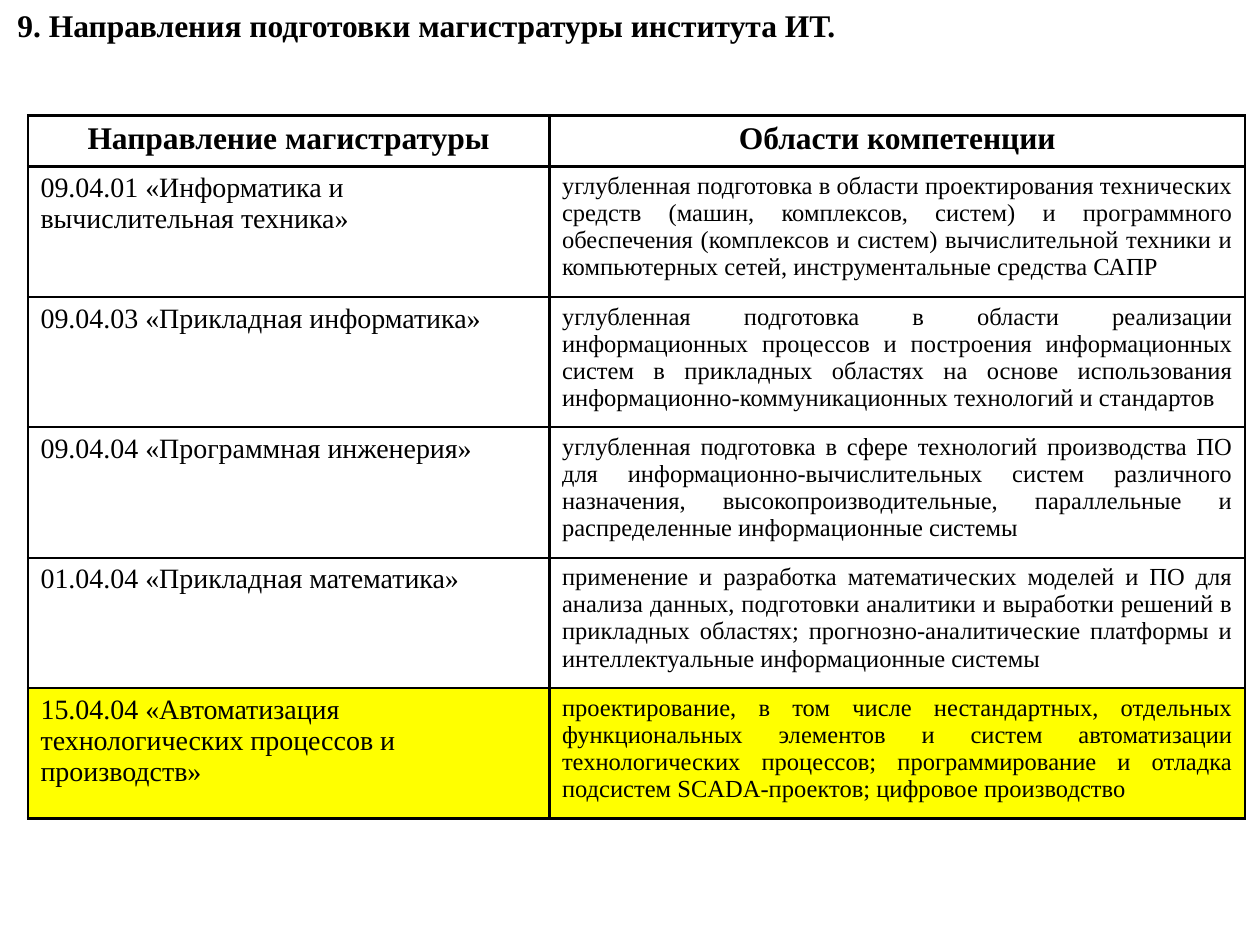
from lxml.etree import SubElement
from pptx import Presentation
from pptx.dml.color import RGBColor
from pptx.enum.text import MSO_AUTO_SIZE, PP_ALIGN as Align
from pptx.oxml.ns import qn
from pptx.util import Pt

BLACK = RGBColor(0, 0, 0)
WHITE = RGBColor(255, 255, 255)
YELLOW = RGBColor(255, 255, 0)
FONT = "Times New Roman"

TITLE = "9. Направления подготовки магистратуры института ИТ."
HEADER = ("Направление магистратуры", "Области компетенции")
PROGRAMS = [
    ("09.04.01 «Информатика и вычислительная техника»",
     "углубленная подготовка в области проектирования технических средств "
     "(машин, комплексов, систем) и программного обеспечения (комплексов и "
     "систем) вычислительной техники и компьютерных сетей, инструментальные "
     "средства САПР"),
    ("09.04.03 «Прикладная информатика»",
     "углубленная подготовка в области реализации информационных процессов и "
     "построения информационных систем в прикладных областях на основе "
     "использования информационно-коммуникационных технологий и стандартов "),
    ("09.04.04 «Программная инженерия»",
     "углубленная подготовка в сфере технологий производства ПО для "
     "информационно-вычислительных систем различного назначения, "
     "высокопроизводительные, параллельные и распределенные информационные "
     "системы"),
    ("01.04.04 «Прикладная математика»",
     "применение и разработка математических моделей и ПО для анализа данных, "
     "подготовки аналитики и выработки решений в прикладных областях; "
     "прогнозно-аналитические платформы и интеллектуальные информационные "
     "системы"),
    ("15.04.04 «Автоматизация технологических процессов и производств»",
     "проектирование, в том числе нестандартных, отдельных функциональных "
     "элементов и систем автоматизации технологических процессов; "
     "программирование и отладка подсистем SCADA-проектов; цифровое "
     "производство"),
]
HIGHLIGHTED = len(PROGRAMS)

COL_WIDTHS = (298, 397.6)
HEADER_H, ROW_H = 29.2, 74.5

HEADING = {"size": Pt(18), "bold": True}
BODY = ({"size": Pt(16), "bold": False}, {"size": Pt(14), "bold": False})
BODY_ALIGN = (Align.LEFT, Align.JUSTIFY)


def write(tf, text, align, style):
    p = tf.paragraphs[0]
    p.alignment = align
    r = p.add_run()
    r.text = text
    r.font.color.rgb = BLACK
    for name, value in {"name": FONT, **style}.items():
        setattr(r.font, name, value)


def add_title(s):
    tf = s.shapes.add_textbox(0, 0, Pt(487.4), Pt(29)).text_frame
    tf.word_wrap = False
    tf.auto_size = MSO_AUTO_SIZE.SHAPE_TO_FIT_TEXT
    write(tf, TITLE, Align.CENTER, HEADING)


def add_borders(cell):
    tc_pr = cell._tc.get_or_add_tcPr()
    for i, side in enumerate(("a:lnL", "a:lnR", "a:lnT", "a:lnB")):
        ln = tc_pr.makeelement(qn(side), {"w": str(Pt(1.5))})
        fill = SubElement(ln, qn("a:solidFill"))
        SubElement(fill, qn("a:srgbClr"), val=str(BLACK))
        tc_pr.insert(i, ln)


def add_program_table(s):
    rows = [HEADER, *PROGRAMS]
    height = HEADER_H + ROW_H * len(PROGRAMS)
    table = s.shapes.add_table(len(rows), len(HEADER), Pt(16), Pt(66),
                               Pt(sum(COL_WIDTHS)), Pt(height)).table
    for col, width in zip(table.columns, COL_WIDTHS):
        col.width = Pt(width)
    for i, texts in enumerate(rows):
        table.rows[i].height = Pt(ROW_H if i else HEADER_H)
        for j, text in enumerate(texts):
            cell = table.cell(i, j)
            cell.fill.solid()
            cell.fill.fore_color.rgb = YELLOW if i == HIGHLIGHTED else WHITE
            add_borders(cell)
            write(cell.text_frame, text,
                  BODY_ALIGN[j] if i else Align.CENTER,
                  BODY[j] if i else HEADING)


def main():
    prs = Presentation()
    prs.slide_width, prs.slide_height = Pt(720), Pt(540)
    s = prs.slides.add_slide(prs.slide_layouts[6])
    add_title(s)
    add_program_table(s)
    prs.save("out.pptx")


if __name__ == "__main__":
    main()
